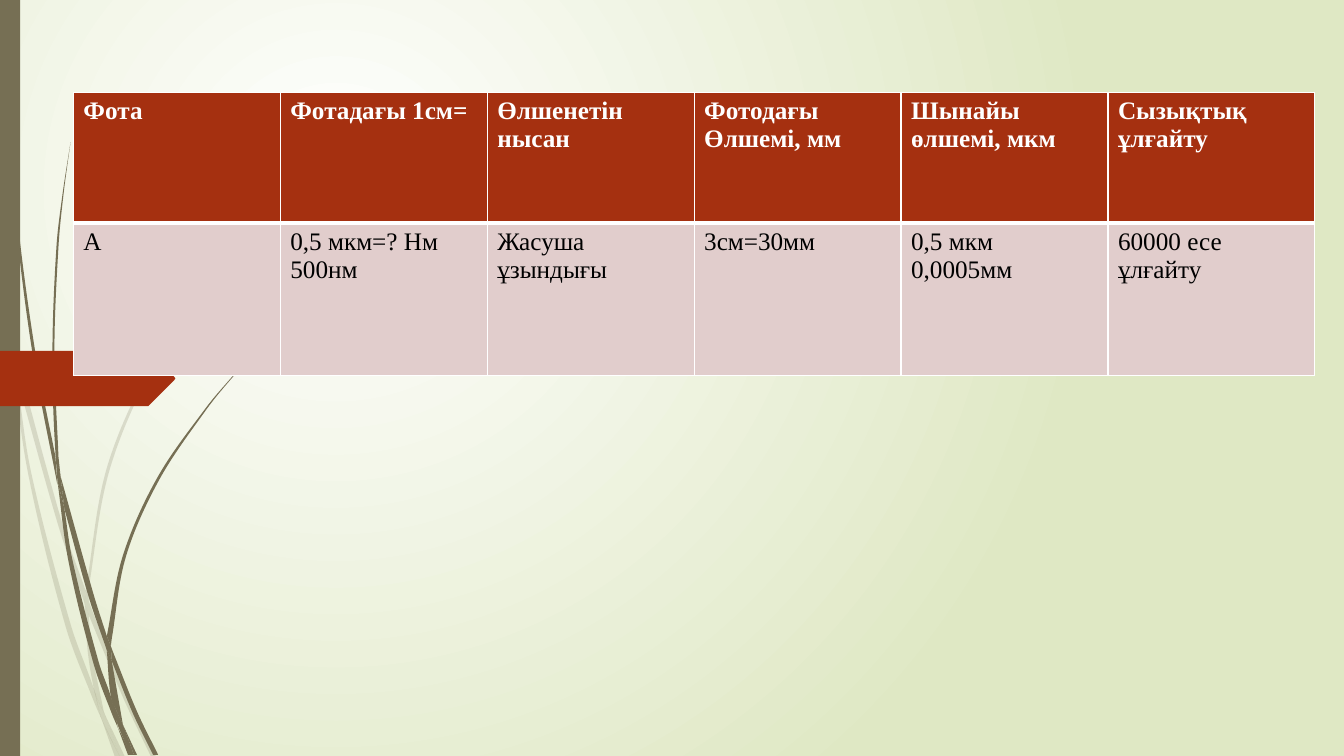
from math import dist

from lxml import etree
from pptx import Presentation
from pptx.dml.color import RGBColor
from pptx.enum import shapes
from pptx.oxml.ns import qn
from pptx.util import Pt

WHITE = RGBColor(0xFF, 0xFF, 0xFF)
BLACK = RGBColor(0, 0, 0)
GREEN = RGBColor(0xDF, 0xE8, 0xC4)
BROWN = RGBColor(0x76, 0x6F, 0x54)
RUST = RGBColor(0xA5, 0x30, 0x10)
PINK = RGBColor(0xE1, 0xCD, 0xCC)
FONT = "Times New Roman"

HEAD = ["Фота", "Фотадағы 1см=", "Өлшенетін\nнысан", "Фотодағы\nӨлшемі, мм",
        "Шынайы өлшемі, мкм", "Сызықтық ұлғайту"]
BODY = ["А", "0,5 мкм=? Нм\n500нм", "Жасуша ұзындығы", "3см=30мм",
        "0,5 мкм\n0,0005мм", "60000 есе ұлғайту"]
# text, fill, text colour, bold, row height
ROWS = [(HEAD, RUST, WHITE, True, 93.6), (BODY, PINK, BLACK, False, 108.6)]
LEFT, TOP, COL = 52.4, 65.8, 147.8

# Each blade of grass has two edges, one there and one back, on a grid of UNIT points
UNIT = 0.72
FAINT = [
    ([(11, 350), (9, 322), (0, 282)], [(0, 299), (10, 344)]),
    ([(17, 376), (58, 522), (84, 599)], [(85, 586), (62, 520), (14, 345)]),
    ([(88, 610), (123, 694), (150, 751)],
     [(155, 751), (127, 692), (92, 607), (88, 596)]),
    ([(105, 711), (119, 751)], [(124, 751)]),
    ([(11, 350), (28, 470), (65, 621), (92, 693), (101, 714)],
     [(99, 707), (93, 683), (70, 619), (31, 469), (17, 376)]),
    ([(84, 599), (87, 646), (93, 683), (96, 692), (105, 711)],
     [(103, 706), (91, 646), (88, 610)]),
    ([(312, 153), (289, 175), (268, 197), (228, 244), (158, 348), (107, 461), (85, 586)],
     [(88, 596), (88, 584), (110, 462), (160, 349), (229, 245), (268, 198),
      (290, 175), (312, 154)]),
    ([(101, 714), (114, 751)], [(119, 751)]),
    ([(85, 586), (84, 599)], [(88, 610), (88, 596)]),
    ([(93, 683), (99, 707), (101, 714), (119, 751)], [(105, 711), (96, 692)]),
]
SOLID = [
    ([(3, 0), (4, 48), (7, 110), (17, 233), (33, 355), (57, 481)],
     [(55, 453), (36, 355), (19, 232), (8, 109), (5, 48), (4, 0)]),
    ([(64, 505), (88, 592), (106, 645)], [(106, 631), (93, 590), (60, 472)]),
    ([(111, 656), (132, 708), (152, 749)],
     [(157, 749), (136, 706), (113, 649), (110, 641)]),
    ([(57, 477), (68, 557), (93, 659), (111, 708), (117, 722)],
     [(116, 717), (110, 691), (98, 657), (72, 556), (64, 505)]),
    ([(70, 141), (62, 193), (56, 245), (52, 349), (55, 449), (60, 472)],
     [(58, 453), (54, 349), (58, 245), (63, 193), (70, 141)]),
    ([(122, 719), (133, 749)], [(136, 749)]),
    ([(55, 449), (57, 477)], [(64, 505), (60, 472)]),
    ([(260, 344), (245, 358), (231, 373), (204, 405), (156, 474), (122, 551), (106, 631)],
     [(110, 641), (111, 633), (125, 552), (158, 476), (205, 406), (231, 374),
      (245, 359), (261, 344)]),
    ([(117, 722), (127, 749)], [(131, 749)]),
    ([(106, 645), (110, 691), (116, 706), (122, 719)], [(111, 656), (109, 651)]),
    ([(106, 631), (106, 645)], [(111, 656), (110, 641)]),
    ([(110, 691), (116, 717), (130, 749)], [(133, 749), (122, 719), (116, 706)]),
]
TAG = [(0, 348), (147, 348), (173, 374), (174, 375.5), (173, 377), (147, 403), (0, 403)]


def bends(edge):
    """The two Bézier handles of each step along the edge."""
    slopes = []
    for i in range(len(edge)):
        near = edge[max(i - 1, 0):i + 2]
        span = sum(dist(a, b) for a, b in zip(near, near[1:])) or 1
        slopes.append([(b - a) / span for a, b in zip(near[0], near[-1])])
    pairs = []
    for p, q, m, n in zip(edge, edge[1:], slopes, slopes[1:]):
        third = dist(p, q) / 3
        pairs.append(([a + third * s for a, s in zip(p, m)],
                      [b - third * s for b, s in zip(q, n)]))
    return pairs


def paint(shape, color):
    shape.shadow.inherit = False
    shape.fill.solid()
    shape.fill.fore_color.rgb = color
    shape.line.fill.background()


def draw(points, color):
    """Add a closed outline given in grid units."""
    spots = [(Pt(x * UNIT), Pt(y * UNIT)) for x, y in points]
    pen = slide.shapes.build_freeform(*spots[0])
    pen.add_line_segments(spots[1:], close=True)
    shape = pen.convert_to_shape()
    paint(shape, color)
    return shape


def grow(there, back, color):
    """Add a blade whose two edges are curved and whose ends are straight."""
    blade = draw(there + back, color)
    steps = bends(there) + [None] + bends(back)
    for line, pair in zip(list(blade._element.iter(qn("a:lnTo"))), steps):
        if pair:
            line.tag = qn("a:cubicBezTo")
            for i, (x, y) in enumerate(pair):
                knob = etree.Element(qn("a:pt"), x=str(Pt(x * UNIT) - blade.left),
                                     y=str(Pt(y * UNIT) - blade.top))
                line.insert(i, knob)
    return blade


def border(cell, side, width):
    line = etree.SubElement(cell._tc.get_or_add_tcPr(), qn("a:ln" + side), w=str(Pt(width)))
    fill = etree.SubElement(line, qn("a:solidFill"))
    etree.SubElement(fill, qn("a:srgbClr"), val=str(WHITE))


deck = Presentation()
deck.slide_width, deck.slide_height = Pt(960), Pt(540)
slide = deck.slides.add_slide(deck.slide_layouts[6])

wash = slide.background.fill
wash.gradient()
for stop, color, place in zip(wash.gradient_stops, (WHITE, GREEN), (0, 1)):
    stop.color.rgb = color
    stop.position = place
grad = slide.element.find(".//" + qn("a:gradFill"))
grad.remove(grad.find(qn("a:lin")))
glow = etree.SubElement(grad, qn("a:path"), path="circle")
etree.SubElement(glow, qn("a:fillToRect"), l="50000", t="50000", r="100000", b="100000")

for there, back in FAINT:
    blade = grow(there, back, BROWN)
    tint = blade._element.spPr.find(qn("a:solidFill")).find(qn("a:srgbClr"))
    etree.SubElement(tint, qn("a:alpha"), val="20000")
for there, back in SOLID:
    grow(there, back, BROWN)

bar = slide.shapes.add_shape(shapes.MSO_SHAPE.RECTANGLE, 0, 0, Pt(14.4), Pt(540))
paint(bar, BROWN)
draw(TAG, RUST)

frame = slide.shapes.add_table(len(ROWS), len(HEAD), Pt(LEFT), Pt(TOP),
                               Pt(COL * len(HEAD)), Pt(sum(row[-1] for row in ROWS)))
table = frame.table
for col in table.columns:
    col.width = Pt(COL)
for r, (words, fill, ink, bold, height) in enumerate(ROWS):
    table.rows[r].height = Pt(height)
    for c, word in enumerate(words):
        cell = table.cell(r, c)
        for side in "LRTB":
            border(cell, side, 3 if (r, side) in ((0, "B"), (1, "T")) else 1)
        cell.fill.solid()
        cell.fill.fore_color.rgb = fill
        cell.text = word
        for para in cell.text_frame.paragraphs:
            font = para.font
            font.name, font.size, font.bold = FONT, Pt(18), bold
            font.color.rgb = ink

deck.save("out.pptx")
